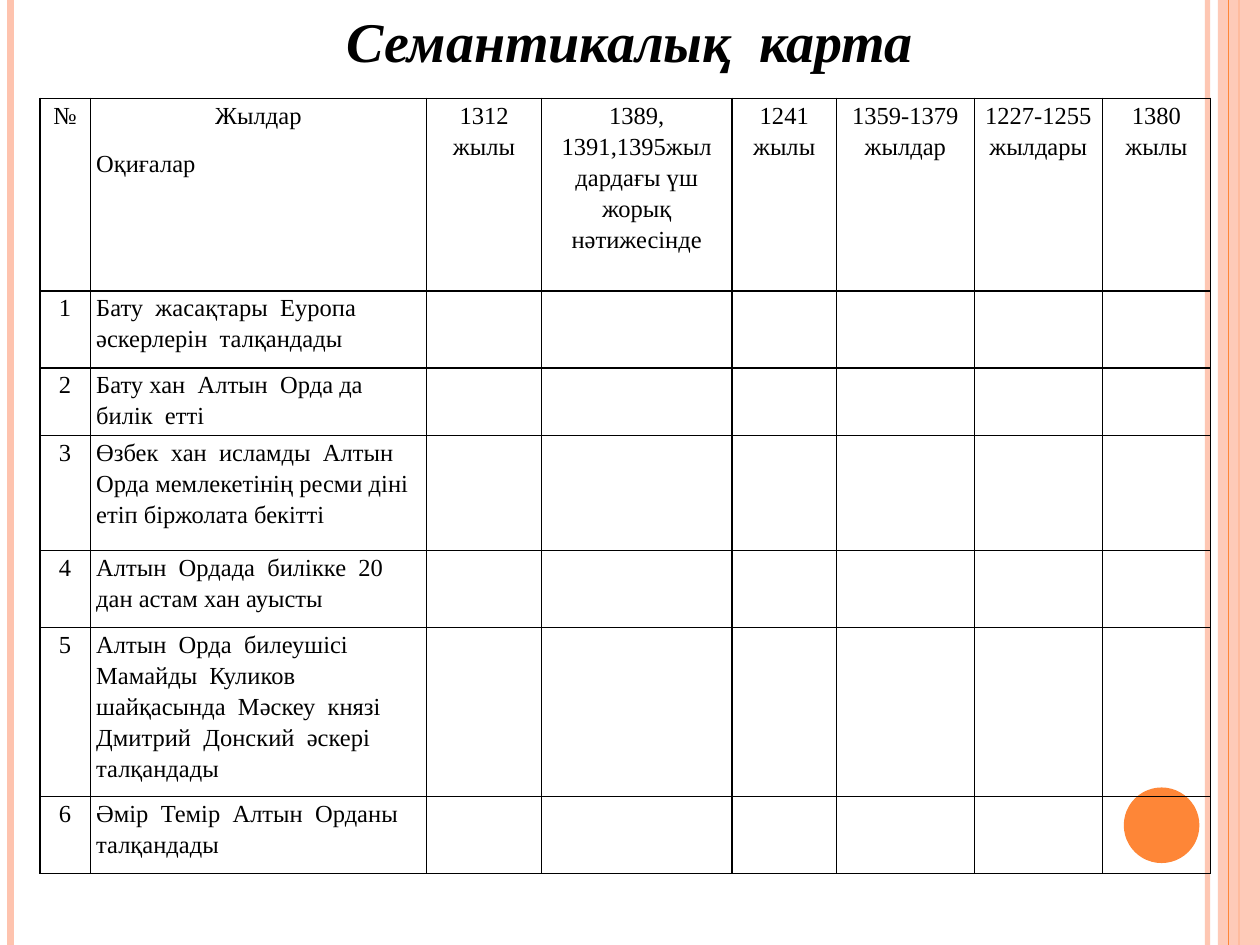
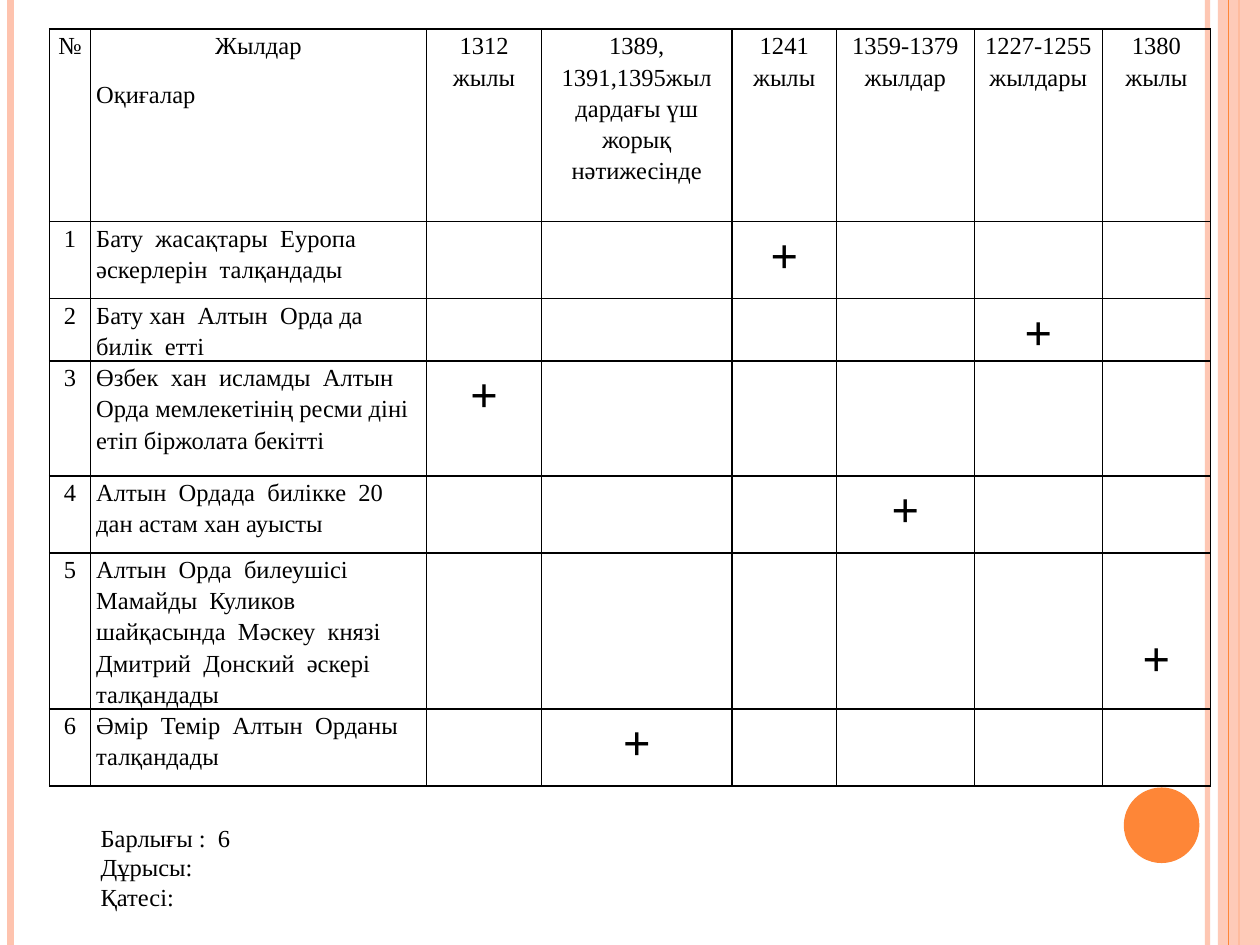
from lxml import etree
from pptx import Presentation
from pptx.dml.color import RGBColor
from pptx.enum.shapes import MSO_CONNECTOR, MSO_SHAPE
from pptx.enum.text import MSO_ANCHOR, MSO_AUTO_SIZE, PP_ALIGN
from pptx.oxml.ns import qn
from pptx.util import Pt

STRAIGHT = MSO_CONNECTOR.STRAIGHT
RECTANGLE, OVAL = MSO_SHAPE.RECTANGLE, MSO_SHAPE.OVAL
TOP, MIDDLE = MSO_ANCHOR.TOP, MSO_ANCHOR.MIDDLE
LEFT, CENTER = PP_ALIGN.LEFT, PP_ALIGN.CENTER
GROW = MSO_AUTO_SIZE.SHAPE_TO_FIT_TEXT

WIDTH, HEIGHT = 720, 540
FONT = "Times New Roman"
BLACK, PEACH, ORANGE = "000000", "FEC3AE", "FE8637"
BODY = {"name": FONT, "size": Pt(14), "bold": False, "italic": False}
TITLE = {**BODY, "size": Pt(32), "bold": True, "italic": True}
MARK = {**BODY, "size": Pt(28), "bold": True}
CELL_SPACING = {"line_spacing": 1.15, "space_after": Pt(10)}

TABLE_RIGHT = 691.8
COLUMN_WIDTHS = [192.2, 65.7, 108.8, 59.8, 78.7, 73.2, 61.8]
YEARS = [
    "1312 жылы",
    "1389, 1391,1395жыл дардағы үш жорық нәтижесінде",
    "1241 жылы",
    "1359-1379 жылдар",
    "1227-1255 жылдары",
    "1380 жылы",
]
EVENTS = [
    "Бату  жасақтары  Еуропа  әскерлерін  талқандады",
    "Бату хан  Алтын  Орда да билік  етті",
    "Өзбек  хан  исламды  Алтын Орда мемлекетінің ресми діні етіп біржолата бекітті",
    "Алтын  Ордада  билікке  20 дан астам хан ауысты",
    "Алтын  Орда  билеушісі  Мамайды  Куликов  шайқасында  Мәскеу  князі  "
    "Дмитрий  Донский  әскері  талқандады",
    "Әмір  Темір  Алтын  Орданы талқандады",
]
ANSWER_COLUMNS = [4, 6, 2, 5, 7, 3]
LOWERED_MARK_ROW = 5


def color(hex_value):
    """Turn a hex string into a colour."""
    return RGBColor.from_string(hex_value)


def apply(target, values):
    """Set every attribute named in a dict of format values."""
    for name, value in values.items():
        setattr(target, name, value)


def set_opacity(shape, percent):
    """Make the first solid colour of a shape partly transparent."""
    solid = shape.element.spPr.find(".//" + qn("a:srgbClr"))
    etree.SubElement(solid, qn("a:alpha")).set("val", str(percent * 1000))


class Deck:
    """Hold the shared style and the slide being built."""

    def __init__(self):
        """Start an empty presentation."""
        self.presentation = Presentation()
        apply(self.presentation, {"slide_width": Pt(WIDTH), "slide_height": Pt(HEIGHT)})
        self.slide = None

    def add_slide(self, title=None):
        """Add a decorated slide, with a title if one is given."""
        name = "Title Only" if title else "Blank"
        layout = self.presentation.slide_layouts.get_by_name(name)
        self.slide = self.presentation.slides.add_slide(layout)
        self.decorate()
        if title:
            self.title(title)

    def decorate(self):
        """Draw the side bands and the circle found on every slide."""
        self.vertical_line(690, PEACH, 3, opacity=93)
        self.vertical_line(6, PEACH, 4.5)
        self.vertical_line(708, ORANGE, 1.5)
        self.shape(RECTANGLE, 696, 0, 24, HEIGHT, PEACH, opacity=87)
        self.vertical_line(702, ORANGE, 0.75)
        self.shape(OVAL, 642.2, 450, 43.2, 43.2, ORANGE)

    def vertical_line(self, x, line_color, width, opacity=100):
        """Draw a line over the full slide height."""
        line = self.slide.shapes.add_connector(STRAIGHT, Pt(x), 0, Pt(x), Pt(HEIGHT))
        line.line.color.rgb = color(line_color)
        line.line.width = Pt(width)
        if opacity < 100:
            set_opacity(line, opacity)
        etree.SubElement(line.element.spPr, qn("a:effectLst"))

    def shape(self, kind, left, top, width, height, fill_color, opacity=100):
        """Draw a filled preset shape without outline."""
        shape = self.slide.shapes.add_shape(kind, Pt(left), Pt(top), Pt(width), Pt(height))
        shape.shadow.inherit = False
        shape.fill.solid()
        shape.fill.fore_color.rgb = color(fill_color)
        shape.line.fill.background()
        if opacity < 100:
            set_opacity(shape, opacity)

    def add_text(self, paragraph, text, font=BODY, alignment=LEFT, spacing=None):
        """Put one formatted run into a paragraph."""
        run = paragraph.add_run()
        run.text = text
        apply(run.font, font)
        run.font.color.rgb = color(BLACK)
        apply(paragraph, {"alignment": alignment, **(spacing or {})})

    def title(self, text):
        """Place and format the title placeholder."""
        title = self.slide.shapes.title
        apply(title, {"left": Pt(22.5), "top": 0, "width": Pt(675), "height": Pt(46)})
        apply(title.text_frame, {"word_wrap": True, "auto_size": GROW, "vertical_anchor": MIDDLE})
        self.add_text(title.text_frame.paragraphs[0], text, TITLE, CENTER)

    def text_box(self, left, top, width, height, lines):
        """Add a text box with one paragraph per line."""
        box = self.slide.shapes.add_textbox(Pt(left), Pt(top), Pt(width), Pt(height))
        frame = box.text_frame
        apply(frame, {"word_wrap": True, "auto_size": GROW})
        for index, line in enumerate(lines):
            self.add_text(frame.add_paragraph() if index else frame.paragraphs[0], line)

    def cell_frame(self, cell):
        """Clear a cell's fill, give it margins and a black border."""
        apply(cell, {"margin_left": Pt(3.4), "margin_right": Pt(3.4), "margin_top": 0,
                     "margin_bottom": 0, "vertical_anchor": TOP})
        cell.fill.background()
        properties = cell._tc.get_or_add_tcPr()
        for index, side in enumerate(("lnL", "lnR", "lnT", "lnB")):
            border = etree.Element(qn("a:" + side), w=str(Pt(1)))
            fill = etree.SubElement(border, qn("a:solidFill"))
            etree.SubElement(fill, qn("a:srgbClr"), val=BLACK)
            properties.insert(index, border)

    def semantic_table(self, top, number_width, row_heights, answered=False):
        """Add the table of events against years, with marks if answered."""
        widths = [number_width, *COLUMN_WIDTHS]
        frame = self.slide.shapes.add_table(
            len(row_heights), len(widths), Pt(TABLE_RIGHT - sum(widths)), Pt(top),
            Pt(sum(widths)), Pt(sum(row_heights)))
        table = frame.table
        apply(table, {"first_row": False, "horz_banding": False})
        for column, width in zip(table.columns, widths):
            column.width = Pt(width)
        for row, height in zip(table.rows, row_heights):
            row.height = Pt(height)
        for cell in table.iter_cells():
            self.cell_frame(cell)

        for column, heading in enumerate(["№", "Жылдар", *YEARS]):
            self.cell_text(table.cell(0, column), heading, alignment=CENTER)
        corner = table.cell(0, 1).text_frame
        self.add_text(corner.add_paragraph(), "Оқиғалар", spacing=CELL_SPACING)
        for row, (event, answer) in enumerate(zip(EVENTS, ANSWER_COLUMNS), 1):
            self.cell_text(table.cell(row, 0), str(row), alignment=CENTER)
            self.cell_text(table.cell(row, 1), event)
            if answered:
                self.cell_text(table.cell(row, answer), "+", MARK, CENTER)
        if answered:
            table.cell(LOWERED_MARK_ROW, ANSWER_COLUMNS[LOWERED_MARK_ROW - 1]).margin_top = Pt(41)

    def cell_text(self, cell, text, font=BODY, alignment=LEFT):
        """Fill the first paragraph of a cell."""
        self.add_text(cell.text_frame.paragraphs[0], text, font, alignment, CELL_SPACING)


def main():
    """Build both slides and save them."""
    deck = Deck()
    deck.add_slide("Семантикалық  карта")
    deck.semantic_table(56.2, 28.8, [110, 44, 38.6, 65.7, 44, 96.6, 44])
    deck.add_slide()
    deck.semantic_table(16.6, 23.2, [110, 44, 35.7, 65.7, 44, 89.1, 44], answered=True)
    deck.text_box(50.4, 466.6, 157, 58.3, ["Барлығы :  6", "Дұрысы:", "Қатесі:"])
    deck.presentation.save("out.pptx")


if __name__ == "__main__":
    main()
